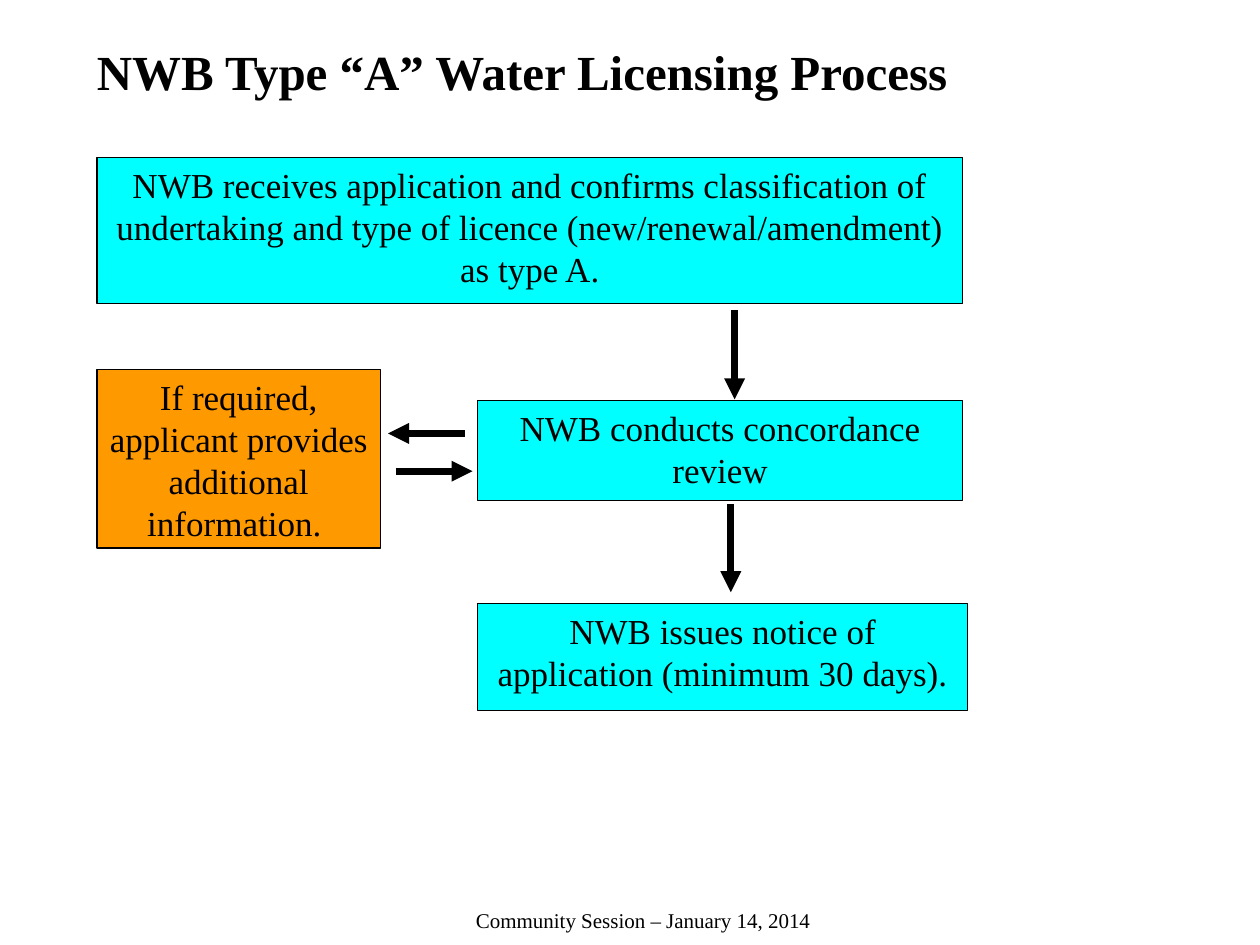
from lxml import etree
from pptx import Presentation
from pptx.dml.color import RGBColor
from pptx.enum import shapes, text
from pptx.oxml import ns
from pptx.util import Inches, Pt

COLORS = {"ink": "000000", "board": "00FFFF", "applicant": "FF9900"}
FONT = "Times New Roman"

STEPS = [
    ("board", (0.77, 1.25, 6.87, 1.16),
     "NWB receives application and confirms classification of undertaking "
     "and type of licence (new/renewal/amendment) as type A."),
    ("board", (3.79, 3.18, 3.85, 0.79), "NWB conducts concordance review"),
    ("applicant", (0.77, 2.93, 2.25, 1.42),
     "If required, applicant provides additional information. "),
    ("board", (3.79, 4.79, 3.89, 0.85),
     "NWB issues notice of application (minimum 30 days)."),
]
ARROWS = [
    ((5.83, 2.46), (5.83, 3.17)),
    ((3.69, 3.44), (3.08, 3.44)),
    ((3.14, 3.74), (3.75, 3.74)),
    ((5.8, 4), (5.8, 4.7)),
]


def color(name):
    return RGBColor.from_string(COLORS[name])


def write(shape, words, size, align, anchor, bold=False):
    frame = shape.text_frame
    frame.word_wrap = True
    frame.vertical_anchor = anchor
    para = frame.paragraphs[0]
    para.text = words
    para.alignment = align
    para.font.name = FONT
    para.font.size = Pt(size)
    para.font.bold = bold
    para.font.color.rgb = color("ink")


def add_label(page, place, words, size, align, bold=False):
    box = page.shapes.add_textbox(*map(Inches, place))
    write(box, words, size, align, text.MSO_ANCHOR.MIDDLE, bold)


def add_step(page, fill, place, words):
    box = page.shapes.add_shape(shapes.MSO_SHAPE.RECTANGLE, *map(Inches, place))
    box.shadow.inherit = False
    box.fill.solid()
    box.fill.fore_color.rgb = color(fill)
    box.line.color.rgb = color("ink")
    box.line.width = Pt(0.75)
    write(box, words, 20, text.PP_ALIGN.CENTER, text.MSO_ANCHOR.TOP)


def add_arrow(page, start, end):
    arrow = page.shapes.add_connector(
        shapes.MSO_CONNECTOR.STRAIGHT, *map(Inches, start + end))
    arrow.line.color.rgb = color("ink")
    arrow.line.width = Pt(4)
    etree.SubElement(arrow.line._get_or_add_ln(), ns.qn("a:tailEnd"), type="triangle")
    etree.SubElement(arrow._element.spPr, ns.qn("a:effectLst"))


def main():
    deck = Presentation()
    deck.slide_width, deck.slide_height = Inches(10), Inches(7.5)
    page = deck.slides.add_slide(deck.slide_layouts[6])
    add_label(page, (2.92, 7.1, 4.33, 0.4), " Community Session – January 14, 2014",
              12, text.PP_ALIGN.CENTER)
    add_label(page, (0.67, 0, 7.33, 1.12), "NWB Type “A” Water Licensing Process",
              28, text.PP_ALIGN.LEFT, bold=True)
    for fill, place, words in STEPS:
        add_step(page, fill, place, words)
    for start, end in ARROWS:
        add_arrow(page, start, end)
    deck.save("out.pptx")


if __name__ == "__main__":
    main()
